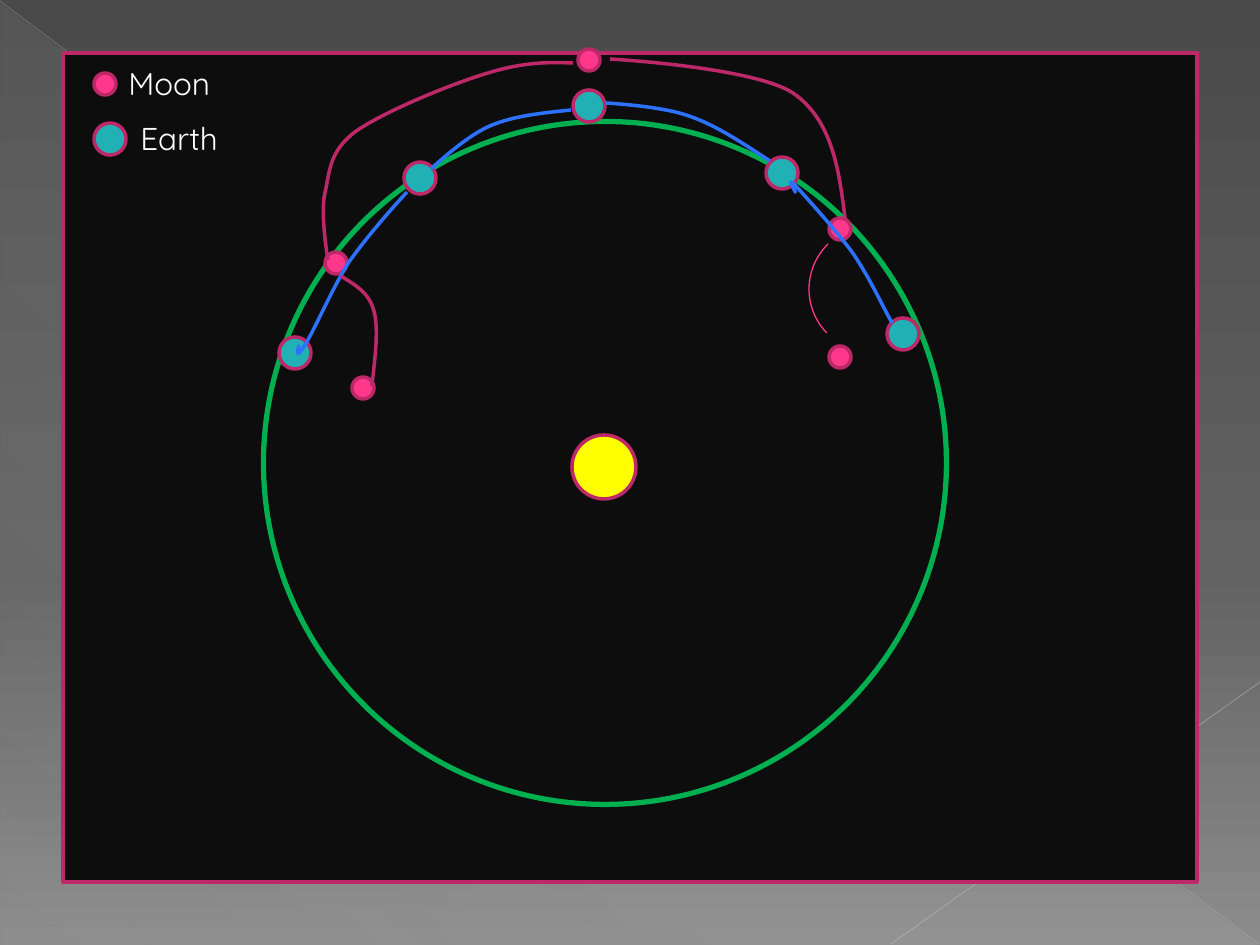
import pptx
import pptx.dml.color
import pptx.enum.shapes
import pptx.enum.text
import pptx.oxml
import pptx.oxml.ns
import pptx.util

SCALE = 914400 / 126
SHAPES = pptx.enum.shapes.MSO_SHAPE
MOON, EARTH, SUN = (22, "FF388C"), (32, "21B1B5"), (64, "FFFF00")
SPACE, RIM, BLUE = "0D0D0D", "BD2968", "2C71FF"

MOONS = [(105, 84), (840, 357), (840, 229), (589, 60), (336, 263), (363, 388)]
EARTHS = [(110, 139), (903, 334), (782, 173), (589, 106), (420, 178), (295, 353)]
EARTH_TRAILS = [
    [(892, 323), (879, 299), (868, 275), (852, 252), (835, 229), (804, 195),
     (795, 185), (785, 175), (796, 193), (796, 193)],
    [(770, 161), (744, 144), (716, 125), (689, 116), (662, 106), (606, 103), (606, 103)],
    [(571, 110), (542, 113), (513, 116), (490, 126), (466, 136), (431, 169), (431, 169)],
    [(407, 192), (387, 214), (367, 237), (349, 262), (333, 287), (314, 331),
     (305, 345), (296, 359), (297, 353), (299, 345)],
]
MOON_TRAILS = [
    [(845, 218), (839, 169), (832, 120), (793, 93), (753, 67), (610, 59), (610, 59)],
    [(573, 63), (548, 62), (524, 62), (488, 73), (451, 84), (383, 112), (355, 132),
     (329, 152), (330, 171), (325, 193), (320, 214), (328, 260), (328, 260)],
    [(341, 276), (355, 285), (369, 292), (374, 311), (379, 329), (375, 358), (372, 386)],
]


def px(length):
    """Turn pixels into EMU."""
    return pptx.util.Emu(round(length * SCALE))


def color(value):
    """Turn a hex string into a colour."""
    return pptx.dml.color.RGBColor.from_string(value)


def add_alpha(element, percent):
    """Give a colour element an opacity."""
    pptx.oxml.ns.qn("a:alpha")
    element.append(pptx.oxml.parse_xml(
        f'<a:alpha {pptx.oxml.ns.nsdecls("a")} val="{percent * 1000}"/>'))


class Canvas:
    """Holds the style and the current slide."""

    font = "Quicksand"
    text_size = 18
    text_color = "FFFFFF"

    def __init__(self, slide):
        """Keep the slide to draw on."""
        self.slide = slide

    def gradient(self, owner, fill, stops, angle):
        """Fill an object with a linear gradient of (position, colour, opacity) stops."""
        fill.gradient()
        old = owner.find(".//" + pptx.oxml.ns.qn("a:gradFill"))
        marks = "".join(
            f'<a:gs pos="{position * 1000}"><a:srgbClr val="{value}">'
            f'<a:alpha val="{opacity * 1000}"/></a:srgbClr></a:gs>'
            for position, value, opacity in stops)
        old.getparent().replace(old, pptx.oxml.parse_xml(
            f'<a:gradFill {pptx.oxml.ns.nsdecls("a")} rotWithShape="1"><a:gsLst>{marks}</a:gsLst>'
            f'<a:lin ang="{angle * 60000}" scaled="0"/></a:gradFill>'))

    def paint(self, shape, fill, line, width):
        """Set fill and line, where None means empty."""
        shape.shadow.inherit = False
        for target, value in ((shape.fill, fill), (shape.line.fill, line)):
            if value:
                target.solid()
                target.fore_color.rgb = color(value)
            else:
                target.background()
        if line:
            shape.line.width = pptx.util.Pt(width)

    def shape(self, kind, left, top, width, height, fill=None, line=None, weight=2):
        """Add a preset shape."""
        shape = self.slide.shapes.add_shape(kind, px(left), px(top), px(width), px(height))
        self.paint(shape, fill, line, weight)
        return shape

    def circle(self, center, diameter, fill, line=RIM, weight=2):
        """Add a circle around its centre."""
        left, top = (value - diameter / 2 for value in center)
        return self.shape(SHAPES.OVAL, left, top, diameter, diameter, fill, line, weight)

    def line(self, start, end, value, weight, opacity):
        """Add a straight, partly clear line."""
        connector = self.slide.shapes.add_connector(
            pptx.enum.shapes.MSO_CONNECTOR.STRAIGHT, *map(px, start + end))
        connector.line.color.rgb = color(value)
        connector.line.width = pptx.util.Pt(weight)
        add_alpha(connector.element.find(".//" + pptx.oxml.ns.qn("a:srgbClr")), opacity)
        connector.element.spPr.append(
            pptx.oxml.parse_xml(f'<a:effectLst {pptx.oxml.ns.nsdecls("a")}/>'))

    def curve(self, points, value):
        """Add a chain of cubic curves: a start, then three points for each curve."""
        (start_x, start_y), *rest = points
        builder = self.slide.shapes.build_freeform(start_x, start_y, scale=SCALE)
        builder.add_line_segments(rest, close=False)
        shape = builder.convert_to_shape()
        segments = shape.element.findall(".//" + pptx.oxml.ns.qn("a:lnTo"))
        for index in range(0, len(segments), 3):
            cubic = pptx.oxml.parse_xml(f'<a:cubicBezTo {pptx.oxml.ns.nsdecls("a")}/>')
            segments[index].addprevious(cubic)
            for segment in segments[index:index + 3]:
                cubic.append(segment[0])
                segment.getparent().remove(segment)
        self.paint(shape, None, value, 2)

    def label(self, left, top, width, height, text):
        """Add a one-line text."""
        box = self.slide.shapes.add_textbox(px(left), px(top), px(width), px(height))
        box.text_frame.word_wrap = False
        box.text_frame.auto_size = pptx.enum.text.MSO_AUTO_SIZE.SHAPE_TO_FIT_TEXT
        run = box.text_frame.paragraphs[0].add_run()
        run.text = text
        run.font.name = self.font
        run.font.size = pptx.util.Pt(self.text_size)
        run.font.color.rgb = color(self.text_color)


def draw_backdrop(canvas):
    """Draw the grey gradient, its faint lines and the dark frame."""
    canvas.gradient(canvas.slide.element, canvas.slide.background.fill,
                    [(0, "4A4A4A", 100), (60, "626262", 100), (100, "8C8C8C", 100)], 90)
    triangle = canvas.shape(SHAPES.RIGHT_TRIANGLE, 1, 3, 1257, 942)
    canvas.gradient(triangle.element, triangle.fill,
                    [(0, "D2D2D2", 10), (70, "D2D2D2", 8), (100, "D2D2D2", 1)], 133)
    canvas.line((0, 1), (1259, 944), "BFBFBF", 0.39, 35)
    canvas.line((1260, 682), (891, 944), "C6C6C6", 0.47, 45)
    canvas.shape(SHAPES.RECTANGLE, 63, 53, 1134, 829, SPACE, RIM)


def draw_orbits(canvas):
    """Draw the sun, the orbit, every earth and moon, and their trails."""
    canvas.circle((605, 463), 683, SPACE, "00B050", 3)
    canvas.circle((604, 467), *SUN)
    for centers, body in ((MOONS, MOON), (EARTHS, EARTH)):
        for center in centers:
            canvas.circle(center, *body)
    arc = canvas.shape(SHAPES.ARC, 809, 226, 126, 126, None, MOON[1], 0.75)
    arc.rotation = 226
    for trails, value in ((EARTH_TRAILS, BLUE), (MOON_TRAILS, RIM)):
        for points in trails:
            canvas.curve(points, value)


def main():
    """Build and save the slide."""
    presentation = pptx.Presentation()
    presentation.slide_width, presentation.slide_height = px(1260), px(945)
    canvas = Canvas(presentation.slides.add_slide(presentation.slide_layouts[6]))
    draw_backdrop(canvas)
    draw_orbits(canvas)
    canvas.label(116, 58, 116, 50, "Moon")
    canvas.label(128, 113, 103, 50, "Earth")
    presentation.save("out.pptx")


if __name__ == "__main__":
    main()
